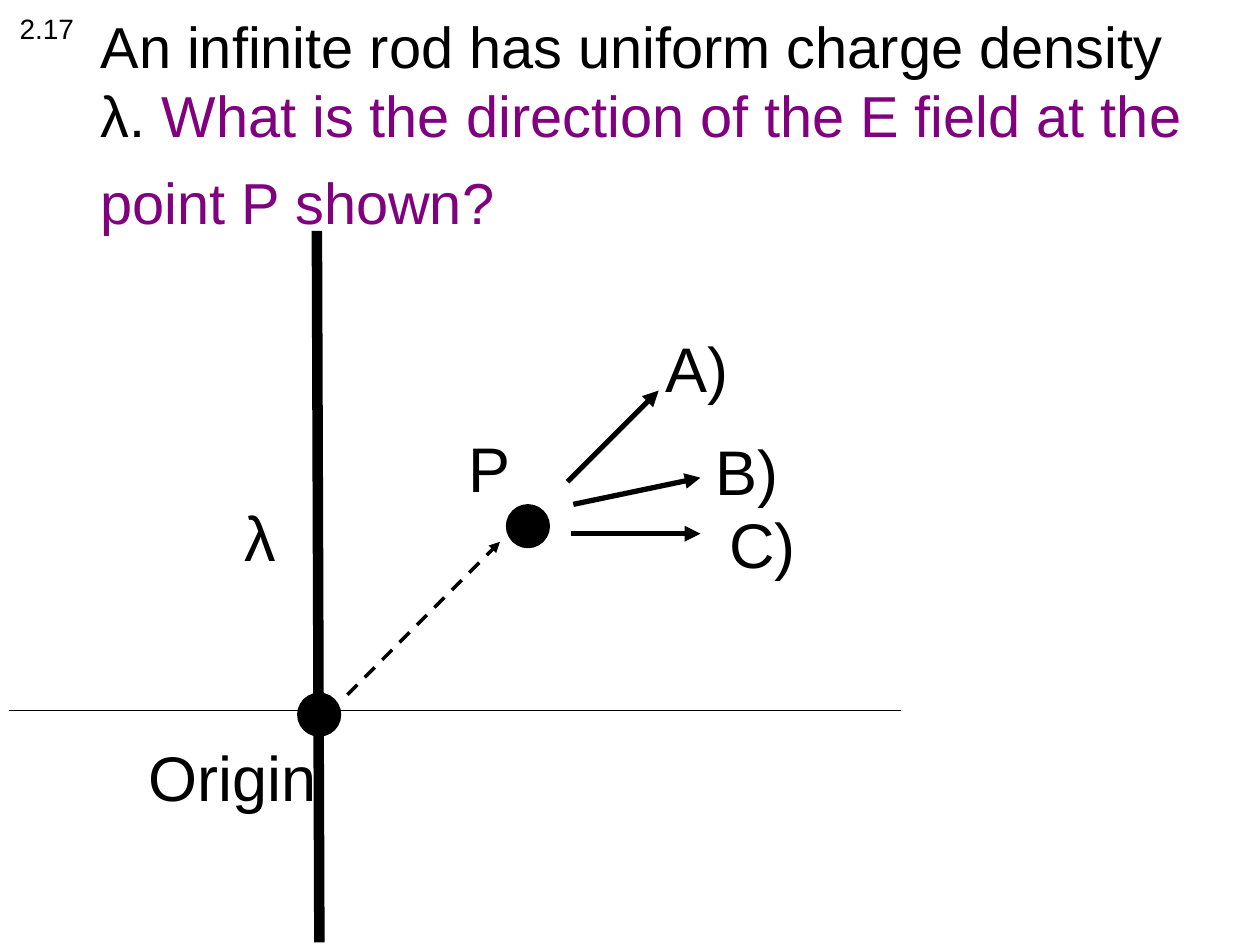
from dataclasses import dataclass
from typing import NamedTuple

from lxml.etree import SubElement
from pptx import Presentation
from pptx.dml.color import RGBColor
from pptx.enum.dml import MSO_LINE_DASH_STYLE as Dash
from pptx.enum.shapes import MSO_CONNECTOR as Connector, MSO_SHAPE as Shape
from pptx.enum.text import MSO_ANCHOR as Anchor, MSO_AUTO_SIZE as AutoSize
from pptx.oxml.ns import qn
from pptx.util import Pt


@dataclass(frozen=True)
class Theme:
    font: str = "Arial"
    ink: RGBColor = RGBColor(0, 0, 0)
    accent: RGBColor = RGBColor(0x80, 0, 0x80)
    question_size: float = 33
    spacer_size: float = 43
    label_size: float = 36
    number_size: float = 16
    hairline: float = 0.75
    dot_diameter: float = 24.5


THEME = Theme()


class Span(NamedTuple):
    text: str
    size: float = THEME.label_size
    color: RGBColor = THEME.ink


class Box(NamedTuple):
    left: float
    top: float
    width: float
    height: float


class Point(NamedTuple):
    x: float
    y: float


class Stroke(NamedTuple):
    start: Point
    end: Point
    width: float = 3
    arrow: bool = True
    dashed: bool = False


class Label(NamedTuple):
    span: Span
    box: Box


QUESTION = (
    Span("An infinite rod has uniform charge density λ. ", THEME.question_size),
    Span("What is the direction of the E field at the point P shown?",
         THEME.question_size, THEME.accent),
    Span(" ", THEME.spacer_size, THEME.accent),  # makes the last line taller
)
QUESTION_BOX = Box(50.4, 26.6, 646.6, 90)

ROD = Stroke(Point(181.1, 132), Point(182.5, 538.5), width=6, arrow=False)
AXIS = Stroke(Point(5, 406), Point(514.8, 406), width=THEME.hairline, arrow=False)
POSITION_VECTOR = Stroke(Point(198.5, 397), Point(285.7, 309.6), width=2, dashed=True)
FIELD_OPTIONS = (
    Stroke(Point(324.3, 275.3), Point(376.4, 223.2)),
    Stroke(Point(326.2, 305), Point(400.3, 305)),
    Stroke(Point(327.6, 288.2), Point(400.3, 273)),
)
ORIGIN = Point(182.4, 408.4)
POINT_P = Point(301.7, 300.7)

LABELS = (
    Label(Span("Origin"), Box(77.8, 418.3, 110.2, 50.4)),
    Label(Span("P"), Box(260.8, 241.9, 38.2, 50.4)),
    Label(Span("A)"), Box(373, 184.6, 51.8, 50.4)),
    Label(Span("B)"), Box(401.9, 243.4, 51.1, 50.4)),
    Label(Span("C)"), Box(409.7, 285.2, 52.6, 50.4)),
    Label(Span("λ"), Box(132.5, 281.5, 34.6, 50.4)),
    Label(Span("2.17", THEME.number_size), Box(4.2, 2.9, 45.4, 26.6)),
)


def add_text(slide, box: Box, *spans: Span, wrap: bool = False,
             anchor: Anchor = Anchor.TOP, grow: bool = True) -> None:
    frame = slide.shapes.add_textbox(*map(Pt, box)).text_frame
    frame.word_wrap = wrap
    frame.vertical_anchor = anchor
    frame.auto_size = AutoSize.SHAPE_TO_FIT_TEXT if grow else AutoSize.NONE
    for span in spans:
        run = frame.paragraphs[0].add_run()
        run.text = span.text
        run.font.name = THEME.font
        run.font.size = Pt(span.size)
        run.font.color.rgb = span.color


def add_stroke(slide, stroke: Stroke) -> None:
    connector = slide.shapes.add_connector(
        Connector.STRAIGHT, *map(Pt, (*stroke.start, *stroke.end)))
    line = connector.line
    line.color.rgb = THEME.ink
    line.width = Pt(stroke.width)
    if stroke.dashed:
        line.dash_style = Dash.DASH
    properties = connector.element.spPr
    if stroke.arrow:
        SubElement(properties.find(qn("a:ln")), qn("a:tailEnd"), type="triangle")
    SubElement(properties, qn("a:effectLst"))


def add_dot(slide, center: Point) -> None:
    diameter = THEME.dot_diameter
    dot = slide.shapes.add_shape(
        Shape.OVAL, Pt(center.x - diameter / 2), Pt(center.y - diameter / 2),
        Pt(diameter), Pt(diameter))
    dot.shadow.inherit = False
    dot.fill.solid()
    dot.fill.fore_color.rgb = THEME.ink
    dot.line.color.rgb = THEME.ink
    dot.line.width = Pt(THEME.hairline)


def main() -> None:
    deck = Presentation()
    deck.slide_width, deck.slide_height = Pt(720), Pt(540)
    slide = deck.slides.add_slide(deck.slide_layouts[6])

    add_text(slide, QUESTION_BOX, *QUESTION,
             wrap=True, anchor=Anchor.MIDDLE, grow=False)
    for stroke in (ROD, AXIS, *FIELD_OPTIONS, POSITION_VECTOR):
        add_stroke(slide, stroke)
    for center in (ORIGIN, POINT_P):
        add_dot(slide, center)
    for label in LABELS:
        add_text(slide, label.box, label.span)

    deck.save("out.pptx")


if __name__ == "__main__":
    main()
